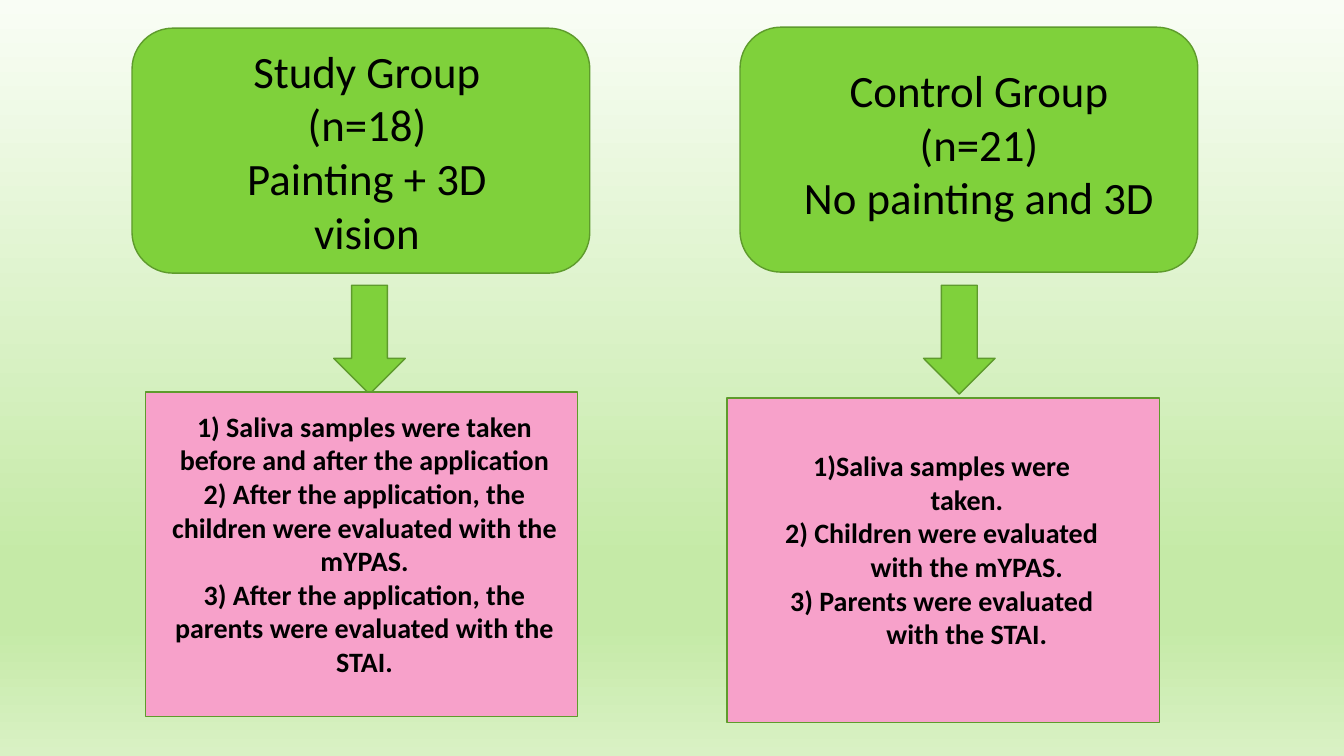
from copy import deepcopy
from dataclasses import dataclass

from pptx import Presentation
from pptx import util as u
from pptx.dml.color import RGBColor
from pptx.enum import shapes, text
from pptx.oxml.ns import qn
from pptx.oxml.xmlchemy import OxmlElement


@dataclass(frozen=True)
class Theme:
    font: str = "Calibri"
    heading_size: int = 32
    list_size: int = 20
    ink: str = "000000"
    green: str = "7FD13B"
    outline: str = "5E9B2C"
    pink: str = "F7A1CA"
    background: tuple = ((0, "F9FDF5"), (0.74, "C5EAA7"), (0.83, "C5EAA7"), (1, "D9F1C4"))


@dataclass(frozen=True)
class Box:
    left: float
    top: float
    width: float
    height: float

    def lengths(self) -> list:
        return [u.Inches(v) for v in (self.left, self.top, self.width, self.height)]


@dataclass(frozen=True)
class Group:
    heading_card: Box
    heading_box: Box
    heading: tuple
    arrow: Box
    list_card: Box
    list_box: Box
    steps: tuple
    hanging: float
    heading_idx: int
    list_idx: int


THEME = Theme()

GROUPS = (
    Group(
        heading_card=Box(1.31, 0.28, 4.54, 2.43),
        heading_box=Box(1.99, 0.38, 3.3, 2.26),
        heading=("Study Group (n=18)", "Painting + 3D vision"),
        arrow=Box(3.31, 2.83, 0.71, 1.08),
        list_card=Box(1.44, 3.89, 4.29, 3.22),
        list_box=Box(1.6, 4.01, 4.03, 2.79),
        steps=(
            "1) Saliva samples were taken before and after the application",
            "2) After the application, the children were evaluated with the mYPAS.",
            "3) After the application, the parents were evaluated with the STAI.",
        ),
        hanging=0, heading_idx=1, list_idx=2,
    ),
    Group(
        heading_card=Box(7.34, 0.27, 4.54, 2.43),
        heading_box=Box(7.85, 0.57, 3.72, 1.72),
        heading=("Control Group (n=21)", "No painting and 3D"),
        arrow=Box(9.16, 2.83, 0.71, 1.08),
        list_card=Box(7.21, 3.95, 4.29, 3.22),
        list_box=Box(7.65, 4.4, 3.38, 2.12),
        steps=(
            "1)Saliva samples were taken.",
            "2) Children were evaluated with the mYPAS.",
            "3) Parents were evaluated with the STAI.",
        ),
        hanging=0.5, heading_idx=3, list_idx=4,
    ),
)


def paint_background(s) -> None:
    fill = s.background.fill
    fill.gradient()
    fill.gradient_angle = 270
    stops = s.element.find(".//" + qn("a:gsLst"))
    while len(stops) < len(THEME.background):
        stops.append(deepcopy(stops[0]))
    for stop, (position, color) in zip(fill.gradient_stops, THEME.background):
        stop.position = position
        stop.color.rgb = RGBColor.from_string(color)


def add_card(s, kind, box: Box, color: str) -> None:
    sp = s.shapes.add_shape(kind, *box.lengths())
    sp.shadow.inherit = False
    sp.fill.solid()
    sp.fill.fore_color.rgb = RGBColor.from_string(color)
    sp.line.color.rgb = RGBColor.from_string(THEME.outline)
    sp.line.width = u.Pt(1)


def fill_placeholder(s, idx: int, box: Box, lines: tuple, size: int,
                     bold: bool, hanging: float = 0) -> None:
    sp = next(ph for ph in s.placeholders if ph.placeholder_format.idx == idx)
    sp.left, sp.top, sp.width, sp.height = box.lengths()
    sp.element.getparent().append(sp.element)  # bring in front of its card
    tf = sp.text_frame
    tf.word_wrap = True
    tf.auto_size = text.MSO_AUTO_SIZE.NONE
    tf.vertical_anchor = text.MSO_ANCHOR.TOP
    for i, line in enumerate(lines):
        p = tf.paragraphs[0] if i == 0 else tf.add_paragraph()
        p.alignment = text.PP_ALIGN.CENTER
        p.line_spacing = 1.0
        p.space_before = p.space_after = u.Pt(0)
        # Bullets off, hanging indent
        pPr = p._p.get_or_add_pPr()
        pPr.set("marL", str(u.Inches(hanging)))
        pPr.set("indent", str(-u.Inches(hanging)))
        pPr.append(OxmlElement("a:buNone"))
        r = p.add_run()
        r.text = line
        r.font.name = THEME.font
        r.font.size = u.Pt(size)
        r.font.bold = bold
        r.font.color.rgb = RGBColor.from_string(THEME.ink)


def add_group(s, group: Group) -> None:
    kinds = shapes.MSO_SHAPE
    add_card(s, kinds.ROUNDED_RECTANGLE, group.heading_card, THEME.green)
    add_card(s, kinds.DOWN_ARROW, group.arrow, THEME.green)
    add_card(s, kinds.RECTANGLE, group.list_card, THEME.pink)
    fill_placeholder(s, group.heading_idx, group.heading_box, group.heading,
                     THEME.heading_size, bold=False)
    fill_placeholder(s, group.list_idx, group.list_box, group.steps,
                     THEME.list_size, bold=True, hanging=group.hanging)


def main() -> None:
    prs = Presentation()
    prs.slide_width, prs.slide_height = u.Inches(13.33), u.Inches(7.5)
    # Comparison layout: two headings, each with its list
    s = prs.slides.add_slide(prs.slide_layouts[4])
    title = s.shapes.title.element
    title.getparent().remove(title)
    paint_background(s)
    for group in GROUPS:
        add_group(s, group)
    prs.save("out.pptx")


if __name__ == "__main__":
    main()
